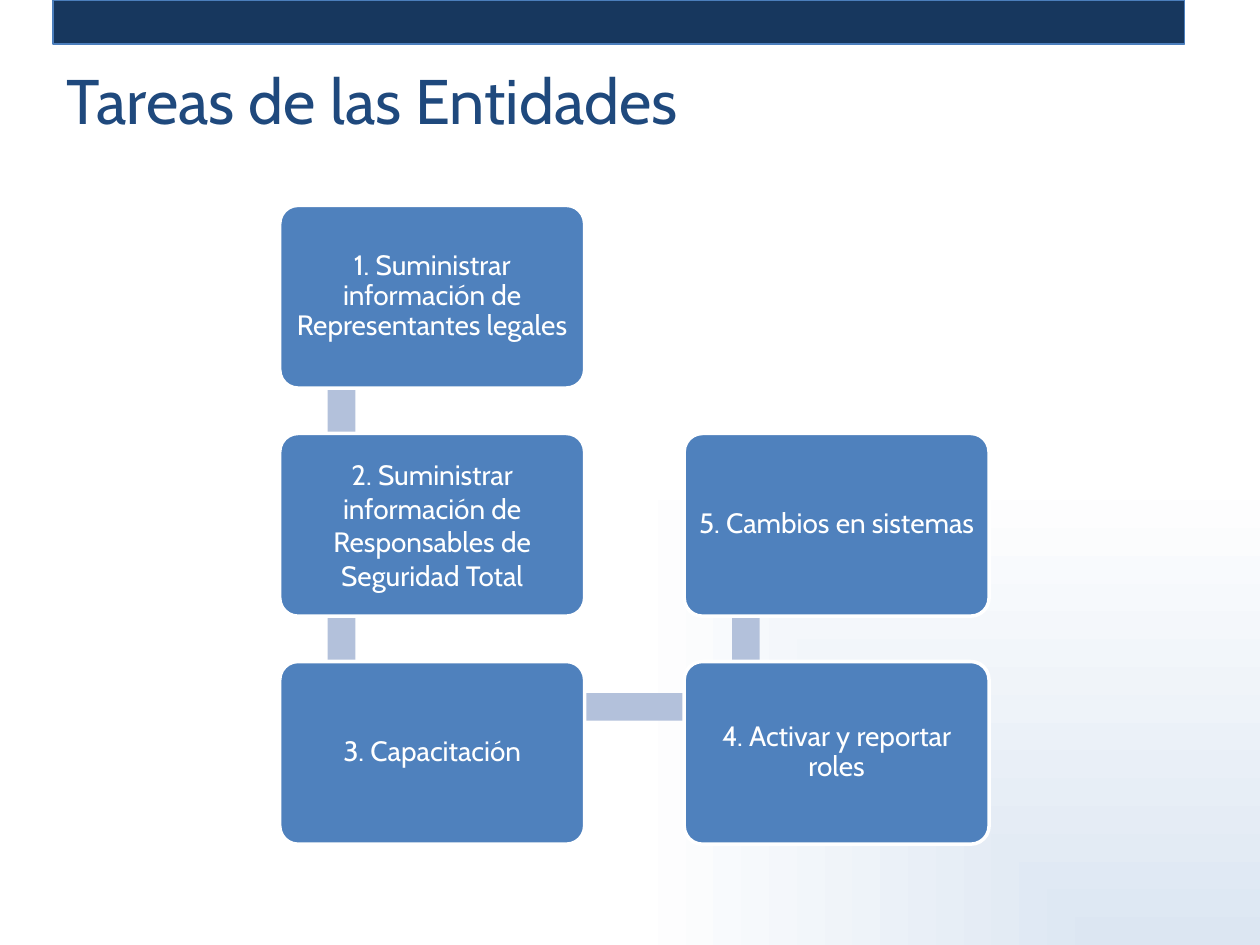
from itertools import pairwise

from pptx import Presentation
from pptx.dml.color import RGBColor
from pptx.enum.shapes import MSO_SHAPE
from pptx.enum.text import MSO_ANCHOR, PP_ALIGN
from pptx.oxml import parse_xml
from pptx.oxml.ns import nsdecls
from pptx.util import Inches, Pt

FONT = "Cabin"
BOX_WIDTH, BOX_HEIGHT = 2.42, 1.45
COLUMN_STEP, ROW_STEP = 3.21, 1.81
ANCHOR_X, ANCHOR_Y = 0.49, 0.36
BAR_THICKNESS = 0.22

STEPS = [
    ("1. Suministrar información de Representantes legales", 0, 0, 0.9),
    ("2. Suministrar información de Responsables de Seguridad Total", 0, 1, 1.0),
    ("3. Capacitación", 0, 2, 0.9),
    ("4. Activar y reportar roles", 1, 2, 0.9),
    ("5. Cambios en sistemas", 1, 1, 0.9),
]


def color(value):
    return RGBColor.from_string(value)


def add_block(slide, preset, left, top, width, height, fill, line=None, line_width=0):
    shape = slide.shapes.add_shape(
        preset, Inches(left), Inches(top), Inches(width), Inches(height)
    )
    shape.shadow.inherit = False
    shape.fill.solid()
    shape.fill.fore_color.rgb = color(fill)
    if line:
        shape.line.color.rgb = color(line)
        shape.line.width = Pt(line_width)
    else:
        shape.line.fill.background()
    return shape


def add_text(paragraph, text, size, value):
    run = paragraph.add_run()
    run.text = text
    run.font.name = FONT
    run.font.size = Pt(size)
    run.font.color.rgb = color(value)


def set_background(slide, corner, outer):
    background = parse_xml(
        f'<p:bg {nsdecls("p", "a")}><p:bgPr><a:gradFill rotWithShape="1"><a:gsLst>'
        f'<a:gs pos="0"><a:srgbClr val="{corner}"/></a:gs>'
        f'<a:gs pos="100000"><a:srgbClr val="{outer}"/></a:gs></a:gsLst>'
        '<a:path path="rect"><a:fillToRect l="100000" t="100000"/></a:path>'
        "</a:gradFill><a:effectLst/></p:bgPr></p:bg>"
    )
    slide.element.cSld.insert(0, background)


def add_title(slide, text, left, top, width, height):
    title = slide.shapes.title
    title.left, title.top = Inches(left), Inches(top)
    title.width, title.height = Inches(width), Inches(height)
    title.text_frame.vertical_anchor = MSO_ANCHOR.MIDDLE
    paragraph = title.text_frame.paragraphs[0]
    paragraph.alignment = PP_ALIGN.LEFT
    add_text(paragraph, text, 36, "1F497D")


def add_step(slide, text, left, top, spacing):
    box = add_block(slide, MSO_SHAPE.ROUNDED_RECTANGLE, left, top,
                    BOX_WIDTH, BOX_HEIGHT, "4F81BD", "FFFFFF", 2)
    box.adjustments[0] = 0.1
    frame = box.text_frame
    frame.word_wrap = True
    frame.vertical_anchor = MSO_ANCHOR.MIDDLE
    frame.margin_left = frame.margin_right = Inches(0.07)
    frame.margin_top = frame.margin_bottom = Inches(0.07)
    paragraph = frame.paragraphs[0]
    paragraph.alignment = PP_ALIGN.CENTER
    paragraph.line_spacing = spacing
    add_text(paragraph, text, 16, "FFFFFF")


def add_bar(slide, start, end):
    (left, right), (top, bottom) = (sorted(pair) for pair in zip(start, end))
    width = max(right - left, BAR_THICKNESS)
    height = max(bottom - top, BAR_THICKNESS)
    center_x = (left + right) / 2 + ANCHOR_X
    center_y = (top + bottom) / 2 + ANCHOR_Y
    add_block(slide, MSO_SHAPE.RECTANGLE, center_x - width / 2,
              center_y - height / 2, width, height, "B3C1DB")


def add_process(slide, left, top):
    corners = [
        (left + column * COLUMN_STEP, top + row * ROW_STEP)
        for _, column, row, _ in STEPS
    ]
    for start, end in pairwise(corners):
        add_bar(slide, start, end)
    for (text, _, _, spacing), corner in zip(STEPS, corners):
        add_step(slide, text, *corner, spacing)


def main():
    presentation = Presentation()
    presentation.slide_width = Inches(10)
    presentation.slide_height = Inches(7.5)
    slide = presentation.slides.add_slide(presentation.slide_layouts[5])
    set_background(slide, "DCE6F2", "FFFFFF")
    add_block(slide, MSO_SHAPE.RECTANGLE, 0.42, 0, 8.98, 0.35, "17375E", "4B7EBC", 0.75)
    add_title(slide, "Tareas de las Entidades", 0.43, 0.21, 8.52, 1.15)
    add_process(slide, 2.22, 1.63)
    presentation.save("out.pptx")


if __name__ == "__main__":
    main()
